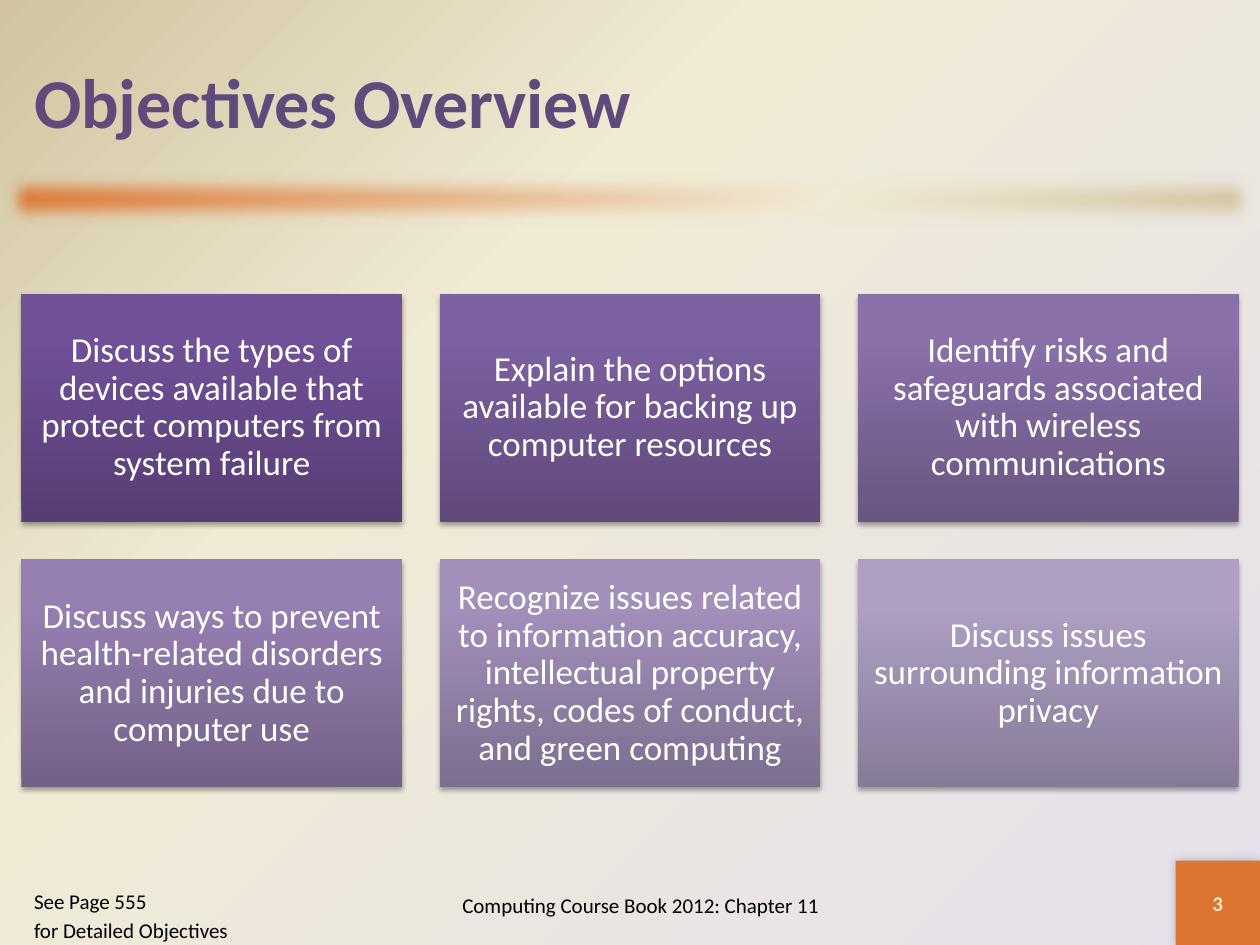
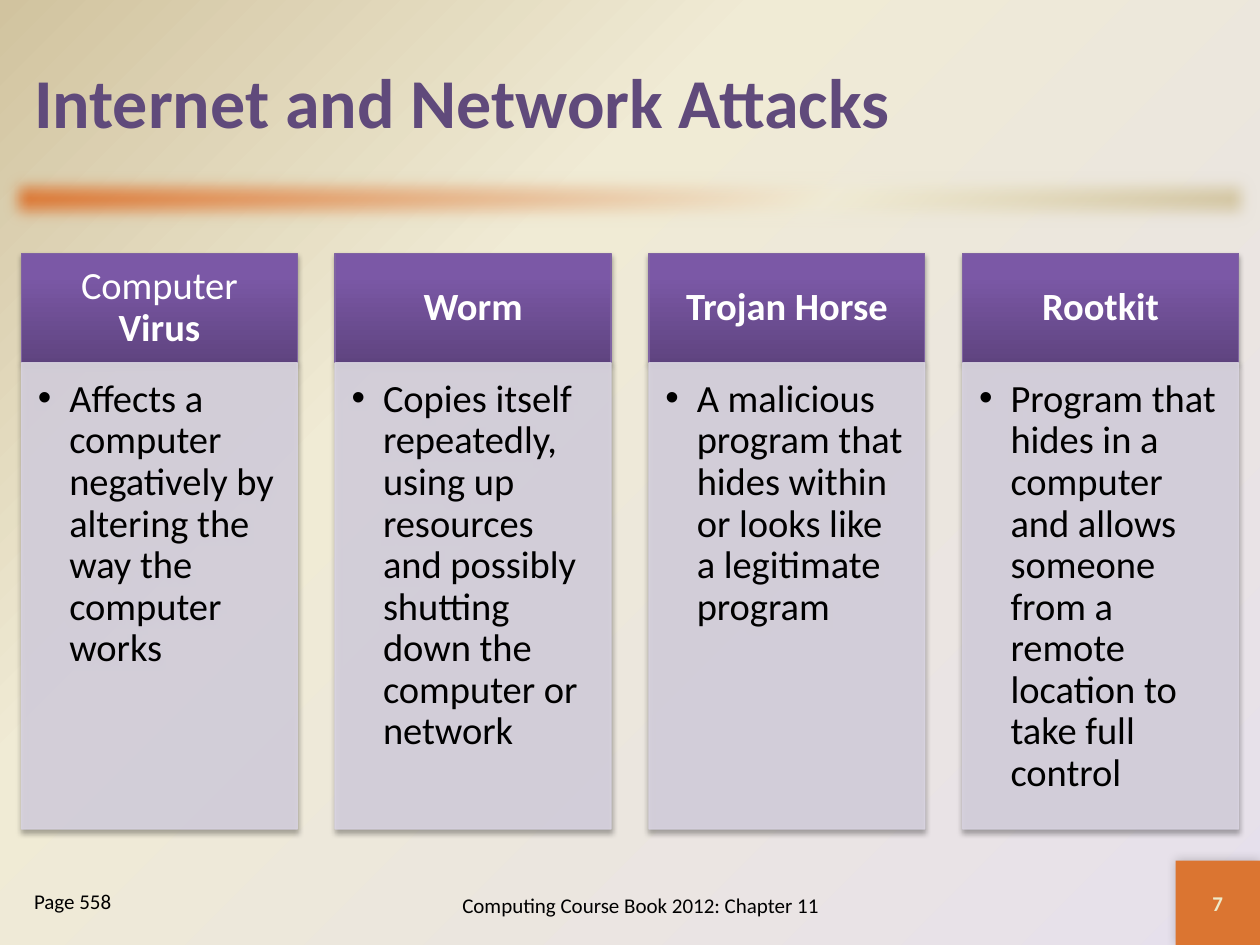
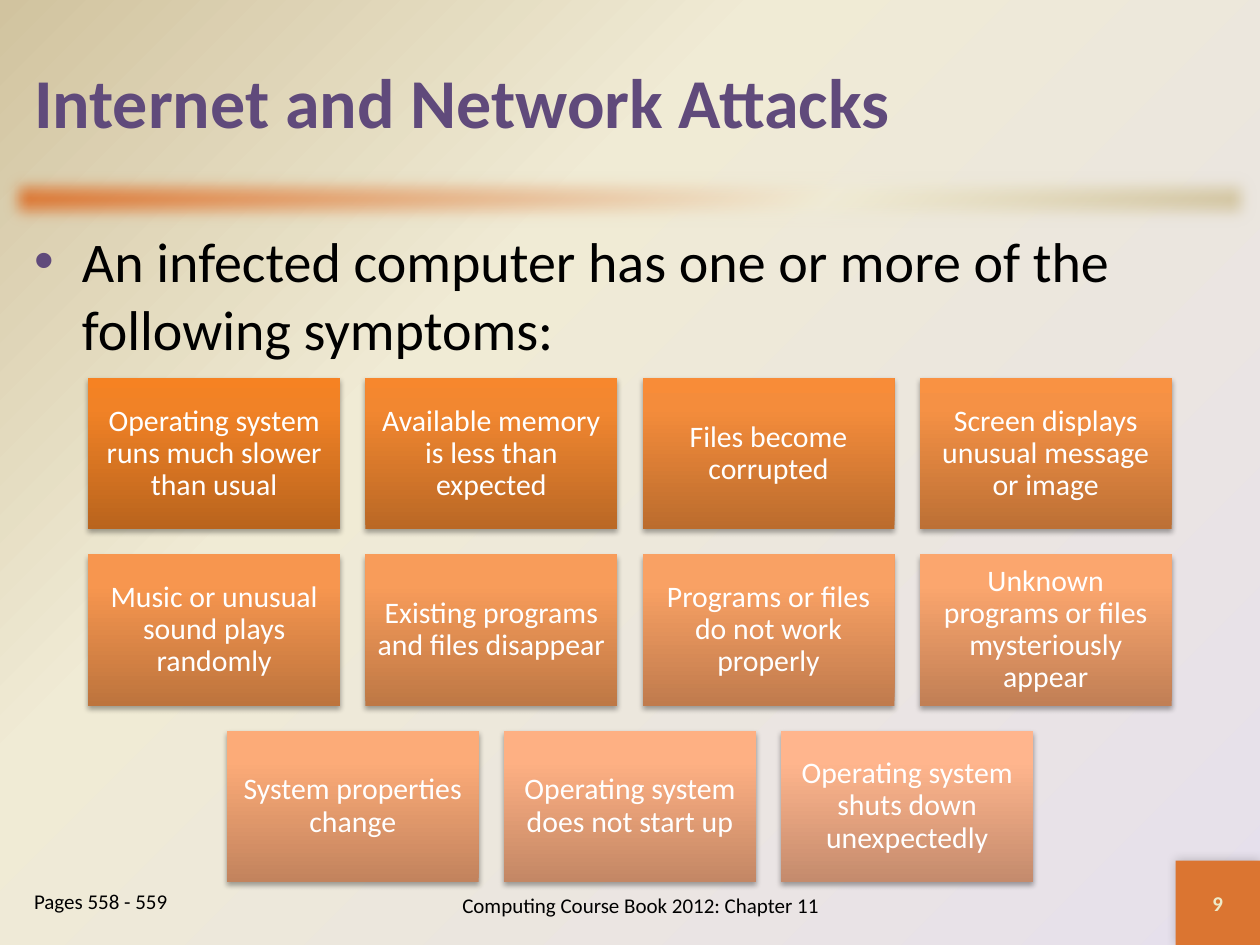
from lxml import etree
from pptx import Presentation
from pptx import util as u
from pptx.dml.color import RGBColor
from pptx.enum import shapes, text
from pptx.oxml import ns, parse_xml

# Shared look
FONT = "Calibri"
PURPLE = RGBColor(0x60, 0x4A, 0x7B)
ORANGE = RGBColor(0xDB, 0x75, 0x31)
CREAM = RGBColor(0xF0, 0xEB, 0xD5)
TAN = RGBColor(0xD1, 0xC3, 0x9F)
LILAC = RGBColor(0xE6, 0xE0, 0xEC)
NUMBER = RGBColor(0xEE, 0xEB, 0xCA)
PANEL = RGBColor(0xD8, 0xD3, 0xE0)
HEADER_LINE = RGBColor(0x80, 0x64, 0xA2)
WHITE = RGBColor(0xFF, 0xFF, 0xFF)
BLACK = RGBColor(0, 0, 0)

# Gradient colours at 0, 80 and 100 percent
TILE_STOPS = (0, 80, 100)
HEADER = [RGBColor.from_string(c) for c in ("5F4480", "7B58A6", "7C57A8")]
PURPLE_FIRST = [RGBColor.from_string(c) for c in ("563D74", "705097", "704F99")]
PURPLE_LAST = [RGBColor.from_string(c) for c in ("867B96", "AE9FC3", "AE9FC4")]
ORANGE_FIRST = [RGBColor.from_string(c) for c in ("B9641D", "F18226", "F68222")]
ORANGE_LAST = [RGBColor.from_string(c) for c in ("C48B6D", "FFB58D", "FFB68F")]

PAGE_WIDTH = 10
FOOTER = "Computing Course Book 2012: Chapter 11"
LEFT, CENTER = text.PP_ALIGN.LEFT, text.PP_ALIGN.CENTER
TOP, MIDDLE = text.MSO_ANCHOR.TOP, text.MSO_ANCHOR.MIDDLE

OBJECTIVES = [
    "Discuss the types of devices available that protect computers from system failure",
    "Explain the options available for backing up computer resources",
    "Identify risks and safeguards associated with wireless communications",
    "Discuss ways to prevent health-related disorders and injuries due to computer use",
    "Recognize issues related to information accuracy, intellectual property rights, "
    "codes of conduct, and green computing",
    "Discuss issues surrounding information privacy",
]
# Heading runs as (text, bold), then the description
ATTACKS = [
    ([("Computer ", False), ("Virus", True)],
     "Affects a computer negatively by altering the way the computer works"),
    ([("Worm", True)],
     "Copies itself repeatedly, using up resources and possibly shutting down "
     "the computer or network"),
    ([("Trojan Horse", True)],
     "A malicious program that hides within or looks like a legitimate program"),
    ([("Rootkit", True)],
     "Program that hides in a computer and allows someone from a remote location "
     "to take full control"),
]
SYMPTOMS = [
    "Operating system runs much slower than usual",
    "Available memory is less than expected",
    "Files become corrupted",
    "Screen displays unusual message or image",
    "Music or unusual sound plays randomly",
    "Existing programs and files disappear",
    "Programs or files do not work properly",
    "Unknown programs or files mysteriously appear",
    "System properties change",
    "Operating system does not start up",
    "Operating system shuts down unexpectedly",
]


# Drawing helpers
def set_gradient(fill, parent, positions, colors, angle):
    """Replace the fill of parent with a linear gradient."""
    fill.solid()
    stops = "".join(
        f'<a:gs pos="{position * 1000}"><a:srgbClr val="{color}"/></a:gs>'
        for position, color in zip(positions, colors))
    solid = parent.find(ns.qn("a:solidFill"))
    parent.replace(solid, parse_xml(
        f'<a:gradFill {ns.nsdecls("a")} rotWithShape="1"><a:gsLst>{stops}</a:gsLst>'
        f'<a:lin ang="{angle * 60000}" scaled="0"/></a:gradFill>'))


def add_effect(shape, xml):
    shape.shadow.inherit = False
    shape.element.spPr.find(ns.qn("a:effectLst")).append(parse_xml(xml))


def add_shadow(shape, alpha=35, blur=3.1, distance=1.8, angle=90):
    add_effect(shape, (
        f'<a:outerShdw {ns.nsdecls("a")} blurRad="{u.Pt(blur)}" dist="{u.Pt(distance)}" '
        f'dir="{angle * 60000}" rotWithShape="0"><a:srgbClr val="000000">'
        f'<a:alpha val="{alpha * 1000}"/></a:srgbClr></a:outerShdw>'))


def make_translucent(parent, alpha):
    color = parent.find(ns.qn("a:solidFill"))[0]
    etree.SubElement(color, ns.qn("a:alpha")).set("val", str(alpha * 1000))


def add_rectangle(page, left, top, width, height):
    box = page.shapes.add_shape(
        shapes.MSO_SHAPE.RECTANGLE, *map(u.Inches, (left, top, width, height)))
    box.line.fill.background()
    return box


def place(box, left, top, width, height):
    box.left, box.top, box.width, box.height = map(u.Inches, (left, top, width, height))


def set_frame(box, anchor, insets=(0.1, 0.05, 0.1, 0.05)):
    frame = box.text_frame
    frame.word_wrap = True
    frame.auto_size = text.MSO_AUTO_SIZE.NONE
    frame.vertical_anchor = anchor
    (frame.margin_left, frame.margin_top,
     frame.margin_right, frame.margin_bottom) = map(u.Inches, insets)
    return frame


def set_indent(para, indent, bullet=None, color=BLACK):
    """Hang the paragraph, with a bullet or without one."""
    props = para._p.get_or_add_pPr()
    props.set("marL", str(u.Inches(indent)))
    props.set("indent", str(-u.Inches(indent)))
    if bullet is None:
        etree.SubElement(props, ns.qn("a:buNone"))
        return
    bullet_color = etree.SubElement(props, ns.qn("a:buClr"))
    etree.SubElement(bullet_color, ns.qn("a:srgbClr")).set("val", str(color))
    etree.SubElement(props, ns.qn("a:buFont")).set("typeface", "Arial")
    etree.SubElement(props, ns.qn("a:buChar")).set("char", bullet)


def write(para, spans, size, color, align=LEFT, spacing=None):
    """Write (text, bold) spans into a paragraph."""
    para.alignment = align
    para.space_before = u.Pt(0)
    if spacing:
        para.line_spacing = spacing
    for words, bold in spans:
        span = para.add_run()
        span.text = words
        span.font.name = FONT
        span.font.size = u.Pt(size)
        span.font.bold = bold
        span.font.color.rgb = color


# Parts found on every slide
def set_background(deck):
    background = deck.slide_master.background
    background.fill.solid()
    holder = next(deck.slide_master.element.iter(ns.qn("p:bgPr")))
    set_gradient(background.fill, holder, (0, 35, 100), (TAN, CREAM, LILAC), 45)


def add_band(page):
    band = add_rectangle(page, 0, 1.33, PAGE_WIDTH, 0.5)
    set_gradient(band.fill, band.element.spPr, (0, 65, 100), (ORANGE, CREAM, TAN), 45)
    add_effect(band, f'<a:softEdge {ns.nsdecls("a")} rad="{u.Pt(10)}"/>')


def add_footer(page, number):
    footer = page.shapes.add_textbox(*map(u.Inches, (3, 6.91, 4.17, 0.55)))
    write(set_frame(footer, MIDDLE).paragraphs[0], [(FOOTER, False)], 12, BLACK, CENTER)
    square = add_rectangle(page, 9.33, 6.83, 0.67, 0.67)
    square.fill.solid()
    square.fill.fore_color.rgb = ORANGE
    add_shadow(square, 20, 6, 0, 225)
    write(set_frame(square, MIDDLE).paragraphs[0], [(str(number), True)], 12, NUMBER, CENTER)


def add_reference(holder, lines):
    place(holder, 0.17, 7, 1.83, 0.5)
    frame = set_frame(holder, TOP)
    for index, line in enumerate(lines):
        para = frame.add_paragraph() if index else frame.paragraphs[0]
        set_indent(para, 0.38)
        write(para, [(line, False)], 12, BLACK)
        if index:
            para.space_before = u.Pt(2.4)


def start_page(deck, layout, title, number, reference):
    page = deck.slides.add_slide(deck.slide_layouts.get_by_name(layout))
    add_band(page)
    heading = page.shapes.title
    place(heading, 0.17, 0.17, 9.67, 1.25)
    write(set_frame(heading, MIDDLE).paragraphs[0], [(title, True)], 40, PURPLE)
    add_reference(list(page.placeholders)[-1], reference)
    add_footer(page, number)
    return page


# Regions
def blend(first, last, share):
    """Mix two lists of colours."""
    return [RGBColor(*(round(a + (b - a) * share) for a, b in zip(start, end)))
            for start, end in zip(first, last)]


def add_tiles(page, labels, columns, top, width, height, gap, size, inset, first, last):
    """Rows of tiles, each row centred on the page, fading from first to last."""
    for index, label in enumerate(labels):
        row, column = divmod(index, columns)
        count = min(columns, len(labels) - row * columns)
        left = (PAGE_WIDTH - count * width - (count - 1) * gap) / 2
        tile = add_rectangle(page, left + column * (width + gap),
                             top + row * (height + gap), width, height)
        colors = blend(first, last, index / (len(labels) - 1))
        set_gradient(tile.fill, tile.element.spPr, TILE_STOPS, colors, 270)
        add_shadow(tile)
        frame = set_frame(tile, MIDDLE, (inset,) * 4)
        write(frame.paragraphs[0], [(label, False)], size, WHITE, CENTER, 0.9)


def set_outline(box, color):
    box.line.color.rgb = color
    box.line.width = u.Pt(0.75)


def add_attack_column(page, left, top, width, heading, description):
    header_height, panel_height = 0.87, 3.7
    header = add_rectangle(page, left, top, width, header_height)
    set_gradient(header.fill, header.element.spPr, TILE_STOPS, HEADER, 270)
    set_outline(header, HEADER_LINE)
    add_shadow(header)
    frame = set_frame(header, MIDDLE, (0.17, 0.1, 0.17, 0.1))
    write(frame.paragraphs[0], heading, 22, WHITE, CENTER, 0.9)

    panel = add_rectangle(page, left, top + header_height, width, panel_height)
    panel.fill.solid()
    panel.fill.fore_color.rgb = PANEL
    set_outline(panel, PANEL)
    properties = panel.element.spPr
    make_translucent(properties, 90)
    make_translucent(properties.find(ns.qn("a:ln")), 90)
    add_shadow(panel)
    para = set_frame(panel, TOP, (0.13, 0.13, 0.17, 0.19)).paragraphs[0]
    set_indent(para, 0.25, "•")
    write(para, [(description, False)], 22, BLACK, LEFT, 0.9)


# Slides
def build_objectives(deck):
    page = start_page(deck, "Title and Content", "Objectives Overview", 3,
                      ["See Page 555", "for Detailed Objectives"])
    add_tiles(page, OBJECTIVES, columns=3, top=2.33, width=3.02, height=1.81, gap=0.3,
              size=20, inset=0.08, first=PURPLE_FIRST, last=PURPLE_LAST)


def build_attacks(deck):
    page = start_page(deck, "Title and Content", "Internet and Network Attacks", 7,
                      ["Page 558"])
    width, gap = 2.19, 0.3
    for index, (heading, description) in enumerate(ATTACKS):
        add_attack_column(page, 0.17 + index * (width + gap), 2.01, width,
                          heading, description)


def build_symptoms(deck):
    page = start_page(deck, "Two Content", "Internet and Network Attacks", 9,
                      ["Pages 558 - 559"])
    body = page.placeholders[1]
    place(body, 0.17, 1.75, 9.67, 5.08)
    para = set_frame(body, TOP).paragraphs[0]
    set_indent(para, 0.38, "•", PURPLE)
    write(para, [("An infected computer has one or more of the following symptoms:", False)],
          32, BLACK)
    add_tiles(page, SYMPTOMS, columns=4, top=3, width=2, height=1.2, gap=0.2,
              size=17, inset=0.07, first=ORANGE_FIRST, last=ORANGE_LAST)


def main():
    deck = Presentation()
    deck.slide_width, deck.slide_height = u.Inches(PAGE_WIDTH), u.Inches(7.5)
    set_background(deck)
    build_objectives(deck)
    build_attacks(deck)
    build_symptoms(deck)
    deck.save("out.pptx")


if __name__ == "__main__":
    main()
